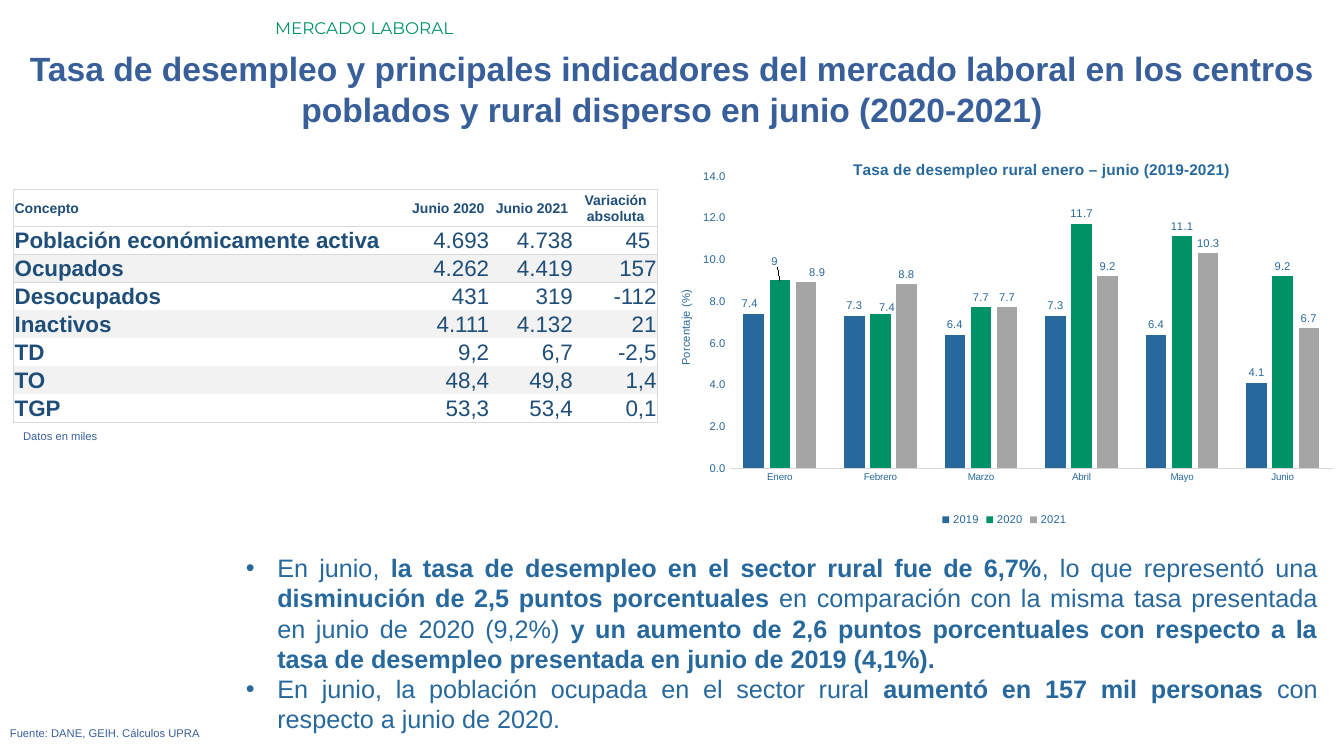
from lxml import etree
from pptx import Presentation
from pptx.chart.data import CategoryChartData
from pptx.dml.color import RGBColor
from pptx.enum.chart import XL_CHART_TYPE, XL_LABEL_POSITION, XL_LEGEND_POSITION, XL_TICK_MARK
from pptx.enum.text import MSO_ANCHOR, PP_ALIGN
from pptx.oxml import parse_xml
from pptx.oxml.ns import nsdecls, qn
from pptx.util import Pt

COLUMNS = XL_CHART_TYPE.COLUMN_CLUSTERED
OUTSIDE_END = XL_LABEL_POSITION.OUTSIDE_END
LEGEND_BOTTOM = XL_LEGEND_POSITION.BOTTOM
NO_TICK = XL_TICK_MARK.NONE
MIDDLE = MSO_ANCHOR.MIDDLE
LEFT, CENTER, RIGHT, JUSTIFY = PP_ALIGN.LEFT, PP_ALIGN.CENTER, PP_ALIGN.RIGHT, PP_ALIGN.JUSTIFY

SLIDE_SIZE = (960, 540)
INDIGO, BLUE, GREEN, GRAY, NAVY = "395F9B", "27689D", "009267", "A5A5A5", "1F4E78"
RULE, BAND = "D9D9D9", "F2F2F2"
NO_GRID_STYLE = "{2D5ABB26-0587-4C30-8999-92F81FD0307C}"

# box, alignment, font, text
LINES = [
    ((189.4, 9.4, 770.4, 21.8), LEFT,
     dict(name="Montserrat", size=12, color=GREEN), "MERCADO LABORAL"),
    ((0, 31, 960, 65.4), CENTER, dict(size=24, color=INDIGO, bold=True),
     "Tasa de desempleo y principales indicadores del mercado laboral en los centros "
     "poblados y rural disperso en junio (2020-2021)"),
    ((0, 515.5, 929.5, 17), JUSTIFY, dict(size=8, color=INDIGO),
     "Fuente: DANE, GEIH. Cálculos UPRA"),
    ((9.4, 303, 450, 17), JUSTIFY, dict(size=8, color=INDIGO), "Datos en miles"),
]

FINDINGS_BOX = (168.5, 391, 779.8, 138.2)
FINDINGS_INDENT = 22.5
# text, bold
FINDINGS = [
    [("En junio, ", False),
     ("la tasa de desempleo en el sector rural fue de 6,7%", True),
     (", lo que representó una ", False),
     ("disminución de 2,5 puntos porcentuales", True),
     (" en comparación con la misma tasa presentada en junio de 2020 (9,2%) ", False),
     ("y un aumento de 2,6 puntos porcentuales con respecto a la tasa de desempleo "
      "presentada en junio de 2019 (4,1%).", True)],
    [("En junio, la población ocupada en el sector rural ", False),
     ("aumentó en 157 mil personas ", True),
     ("con respecto a junio de 2020.", False)],
]

TABLE_AT = (9.8, 135.5)
COLUMN_WIDTHS = [280.5, 59.8, 59.8, 59.8]
HEADER_HEIGHT, ROW_HEIGHT = 26, 20
INDICATORS = [
    ("Concepto", "Junio 2020", "Junio 2021", "Variación absoluta"),
    ("Población económicamente activa", "4.693", "4.738", "45 "),
    ("Ocupados", "4.262", "4.419", "157"),
    ("Desocupados", "431", "319", "-112"),
    ("Inactivos", "4.111", "4.132", "21"),
    ("TD", "9,2", "6,7", "-2,5"),
    ("TO", "48,4", "49,8", "1,4"),
    ("TGP", "53,3", "53,4", "0,1"),
]

CHART_BOX = (478, 103.6, 479, 275)
CHART_TITLE = "Tasa de desempleo rural enero – junio (2019-2021)"
MONTHS = ["Enero", "Febrero", "Marzo", "Abril", "Mayo", "Junio"]
# year, colour, rates, label shifts by month in points
UNEMPLOYMENT = [
    ("2019", BLUE, (7.4, 7.3, 6.4, 7.3, 6.4, 4.1), {0: (-3, 0)}),
    ("2020", GREEN, (9, 7.4, 7.7, 11.7, 11.1, 9.2), {0: (-4, -6), 1: (5, 3)}),
    ("2021", GRAY, (8.9, 8.8, 7.7, 9.2, 10.3, 6.7), {0: (8, 0)}),
]


def points(lengths):
    return [Pt(length) for length in lengths]


def paint(color_format, hex_color):
    color_format.rgb = RGBColor.from_string(hex_color)


def style(font, size, color, bold=False, name="Arial"):
    for key, value in dict(size=Pt(size), bold=bold, name=name).items():
        setattr(font, key, value)
    paint(font.color, color)


def add_text_frame(slide, box):
    frame = slide.shapes.add_textbox(*points(box)).text_frame
    frame.word_wrap = True
    return frame


def add_findings(slide):
    frame = add_text_frame(slide, FINDINGS_BOX)
    for i, finding in enumerate(FINDINGS):
        paragraph = frame.add_paragraph() if i else frame.paragraphs[0]
        paragraph.alignment = JUSTIFY
        props = paragraph._p.get_or_add_pPr()
        props.set("marL", str(Pt(FINDINGS_INDENT)))
        props.set("indent", str(-Pt(FINDINGS_INDENT)))
        etree.SubElement(props, qn("a:buFont")).set("typeface", "Arial")
        etree.SubElement(props, qn("a:buChar")).set("char", "•")
        for text, bold in finding:
            run = paragraph.add_run()
            run.text = text
            style(run.font, 18, BLUE, bold)


def add_border(cell, side):
    cell._tc.get_or_add_tcPr().append(parse_xml(
        f'<a:ln{side} {nsdecls("a")} w="{Pt(0.5)}"><a:solidFill>'
        f'<a:srgbClr val="{RULE}"/></a:solidFill></a:ln{side}>'))


def add_indicators(slide):
    last_row, last_column = len(INDICATORS) - 1, len(COLUMN_WIDTHS) - 1
    size = (sum(COLUMN_WIDTHS), HEADER_HEIGHT + last_row * ROW_HEIGHT)
    table = slide.shapes.add_table(last_row + 1, last_column + 1,
                                   *points(TABLE_AT + size)).table
    table.first_row = table.horz_banding = False
    table._tbl.tblPr.find(qn("a:tableStyleId")).text = NO_GRID_STYLE
    for column, width in zip(table.columns, COLUMN_WIDTHS):
        column.width = Pt(width)
    for r, values in enumerate(INDICATORS):
        table.rows[r].height = Pt(ROW_HEIGHT if r else HEADER_HEIGHT)
        for c, value in enumerate(values):
            cell = table.cell(r, c)
            for key, setting in dict(margin_left=Pt(0.7), margin_right=Pt(0.7),
                                     margin_top=Pt(0.7), margin_bottom=0,
                                     vertical_anchor=MIDDLE).items():
                setattr(cell, key, setting)
            edges = {"L": c == 0, "R": c == last_column,
                     "T": r <= 2, "B": r in (0, 1, last_row)}
            for side, ruled in edges.items():
                if ruled:
                    add_border(cell, side)
            if r and r % 2 == 0:
                cell.fill.solid()
                paint(cell.fill.fore_color, BAND)
            else:
                cell.fill.background()
            paragraph = cell.text_frame.paragraphs[0]
            paragraph.alignment = LEFT if c == 0 else RIGHT if r else CENTER
            run = paragraph.add_run()
            run.text = value
            style(run.font, 16 if r else 10, NAVY, bold=r == 0 or c == 0)


def manual_layout(x, y, w=None, h=None, inner=False, shift=False):
    """Chart layout in fractions of the chart; a shift is relative to the default place."""
    values = {}
    if inner:
        values["layoutTarget"] = "inner"
    if not shift:
        values.update(xMode="edge", yMode="edge")
    values.update(x=x, y=y)
    if w:
        values.update(w=w, h=h)
    items = "".join(f'<c:{key} val="{value}"/>' for key, value in values.items())
    return parse_xml(f'<c:layout {nsdecls("c")}><c:manualLayout>{items}'
                     '</c:manualLayout></c:layout>')


def set_title(owner, text, size, bold, x, y):
    """Title a chart or an axis at a place given in fractions of the chart."""
    owner.has_title = True
    title = owner.chart_title if hasattr(owner, "chart_title") else owner.axis_title
    run = title.text_frame.paragraphs[0].add_run()
    run.text = text
    style(run.font, size, BLUE, bold)
    element = title._element
    for old in element.findall(qn("c:layout")):
        element.remove(old)
    element.find(qn("c:tx")).addnext(manual_layout(x, y))


def add_unemployment(slide):
    data = CategoryChartData()
    data.categories = MONTHS
    for year, _, rates, _ in UNEMPLOYMENT:
        data.add_series(year, rates)
    chart = slide.shapes.add_chart(COLUMNS, *points(CHART_BOX), data).chart
    style(chart.font, 8, BLUE)
    set_title(chart, CHART_TITLE, 11, True, 0.27, 0.03)
    chart.has_legend = True
    chart.legend.position = LEGEND_BOTTOM
    chart.legend.include_in_layout = False
    style(chart.legend.font, 8, BLUE)

    area = chart._chartSpace.chart.plotArea
    for old in area.findall(qn("c:layout")):
        area.remove(old)
    area.insert(0, manual_layout(0.09, 0.08, 0.9, 0.76, inner=True))

    months, rate = chart.category_axis, chart.value_axis
    for axis, size in ((months, 7), (rate, 8)):
        axis.major_tick_mark = axis.minor_tick_mark = NO_TICK
        axis.has_major_gridlines = False
        style(axis.tick_labels.font, size, BLUE)
    paint(months.format.line.color, RULE)
    months.format.line.width = Pt(0.75)
    rate.format.line.fill.background()
    rate.minimum_scale, rate.maximum_scale, rate.major_unit = 0, 14, 2
    rate.tick_labels.number_format = "#,##0.0"
    rate.tick_labels.number_format_is_linked = False
    set_title(rate, "Porcentaje (%)", 8, False, 0.01, 0.37)

    plot = chart.plots[0]
    plot.gap_width, plot.overlap, plot.vary_by_categories = 136, -27, False
    for series, (_, color, _, shifts) in zip(plot.series, UNEMPLOYMENT):
        series.format.fill.solid()
        paint(series.format.fill.fore_color, color)
        labels = series.data_labels
        labels.show_value = True
        labels.position = OUTSIDE_END
        style(labels.font, 8, BLUE)
        for month, (dx, dy) in shifts.items():
            label = series.points[month].data_label
            style(label.font, 8, BLUE)
            label.position = OUTSIDE_END
            x, y = round(dx / CHART_BOX[2], 3), round(dy / CHART_BOX[3], 3)
            labels._element.find(f"{qn('c:dLbl')}/{qn('c:idx')}[@val='{month}']").addnext(
                manual_layout(x, y, shift=True))


def main():
    deck = Presentation()
    deck.slide_width, deck.slide_height = points(SLIDE_SIZE)
    slide = deck.slides.add_slide(deck.slide_layouts[6])
    for box, alignment, font, text in LINES:
        paragraph = add_text_frame(slide, box).paragraphs[0]
        paragraph.alignment = alignment
        run = paragraph.add_run()
        run.text = text
        style(run.font, **font)
    add_findings(slide)
    add_indicators(slide)
    add_unemployment(slide)
    deck.save("out.pptx")


if __name__ == "__main__":
    main()
